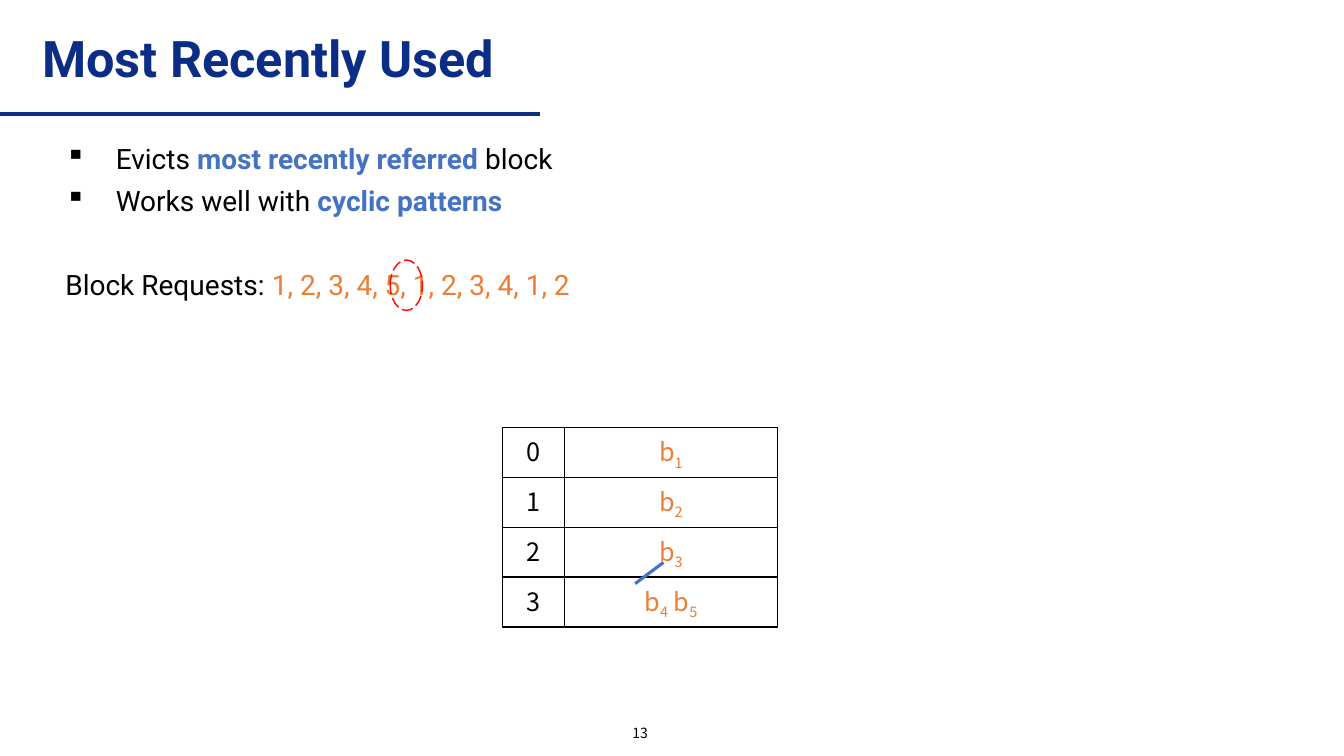
from dataclasses import dataclass
from typing import NamedTuple

from lxml import etree
from pptx import Presentation
from pptx.dml.color import RGBColor
from pptx.enum.dml import MSO_LINE
from pptx.enum.shapes import MSO_CONNECTOR, MSO_SHAPE
from pptx.enum.text import MSO_ANCHOR, PP_ALIGN
from pptx.oxml.ns import qn
from pptx.util import Inches, Pt

CENTER = PP_ALIGN.CENTER
MIDDLE, TOP = MSO_ANCHOR.MIDDLE, MSO_ANCHOR.TOP
STRAIGHT = MSO_CONNECTOR.STRAIGHT
ELLIPSE = MSO_SHAPE.OVAL
LONG_DASH = MSO_LINE.LONG_DASH
BLANK_LAYOUT = 6


@dataclass(frozen=True)
class Theme:
    heading_font: str = "Roboto"
    table_font: str = "Noto Sans CJK KR"
    navy: str = "0B2D86"
    blue: str = "4472C4"
    orange: str = "ED7D31"
    red: str = "FF0000"
    black: str = "000000"
    title_size: int = 36
    body_size: int = 20
    table_size: int = 18
    number_size: int = 10


THEME = Theme()


class Run(NamedTuple):
    text: str
    color: str = THEME.black
    bold: bool = False
    subscript: bool = False


class Line(NamedTuple):
    runs: list[Run]
    formats: dict = {}
    bullet: str = ""


class TextBox(NamedTuple):
    box: tuple[float, float, float, float]
    lines: list[Line]
    font: str
    size: int
    anchor: MSO_ANCHOR


class Segment(NamedTuple):
    start: tuple[float, float]
    end: tuple[float, float]
    color: str
    width: float


BULLET_GAP = {"space_before": Pt(6)}
TEXT_BOXES = [
    TextBox((0.32, 0.24, 9.17, 0.74),
            [Line([Run("Most Recently Used", THEME.navy, bold=True)],
                  {"line_spacing": 0.9})],
            THEME.heading_font, THEME.title_size, MIDDLE),
    TextBox((4.85, 7.11, 3, 0.32), [Line([Run("13")], {"alignment": CENTER})],
            THEME.table_font, THEME.number_size, MIDDLE),
    TextBox((0.55, 1.35, 12.14, 1.81), [
        Line([Run("Evicts "), Run("most recently referred", THEME.blue, bold=True),
              Run(" block")], bullet="▪"),
        Line([Run("Works well with "), Run("cyclic patterns", THEME.blue, bold=True)],
             BULLET_GAP, bullet="▪"),
        Line([Run("Block Requests: "),
              Run("1, 2, 3, 4, 5, 1, 2, 3, 4, 1, 2", THEME.orange)],
             {"space_before": Pt(36)}),
    ], THEME.heading_font, THEME.body_size, TOP),
]

TITLE_RULE = Segment((0, 1.13), (5.36, 1.13), THEME.navy, 3)
EVICTION_STROKE = Segment((6.3, 5.79), (6.58, 5.58), THEME.blue, 2.25)
REQUEST_MARK = (3.87, 2.58, 0.32, 0.5)

CACHE_SLOTS = [["1"], ["2"], ["3"], ["4", "5"]]
CACHE_POSITION = (4.98, 4.24)
CACHE_COLUMNS = (0.62, 2.11)
CACHE_ROW_HEIGHT = 0.495


def rgb(color: str) -> RGBColor:
    return RGBColor.from_string(color)


def apply_formats(target, formats: dict) -> None:
    for name, value in formats.items():
        setattr(target, name, value)


def add_bullet(paragraph, symbol: str) -> None:
    properties = paragraph._p.get_or_add_pPr()
    properties.set("marL", str(Inches(0.5)))
    properties.set("indent", str(-Inches(0.5)))
    etree.SubElement(properties, qn("a:buChar"), char=symbol)


def write_line(paragraph, line: Line, font: str, size: int) -> None:
    if line.bullet:
        add_bullet(paragraph, line.bullet)
    apply_formats(paragraph, line.formats)
    for part in line.runs:
        run = paragraph.add_run()
        run.text = part.text
        apply_formats(run.font, {"name": font, "size": Pt(size), "bold": part.bold})
        run.font.color.rgb = rgb(part.color)
        if part.subscript:
            run.font._element.set("baseline", "-25000")


def add_text(slide, item: TextBox) -> None:
    frame = slide.shapes.add_textbox(*map(Inches, item.box)).text_frame
    apply_formats(frame, {"word_wrap": True, "vertical_anchor": item.anchor})
    for index, line in enumerate(item.lines):
        paragraph = frame.add_paragraph() if index else frame.paragraphs[0]
        write_line(paragraph, line, item.font, item.size)


def add_segment(slide, segment: Segment) -> None:
    ends = map(Inches, segment.start + segment.end)
    connector = slide.shapes.add_connector(STRAIGHT, *ends)
    connector.line.color.rgb = rgb(segment.color)
    connector.line.width = Pt(segment.width)
    etree.SubElement(connector._element.spPr, qn("a:effectLst"))


def add_borders(cell) -> None:
    properties = cell._tc.get_or_add_tcPr()
    for index, side in enumerate(("lnL", "lnR", "lnT", "lnB")):
        border = etree.Element(qn(f"a:{side}"), w=str(Pt(1)))
        fill = etree.SubElement(border, qn("a:solidFill"))
        etree.SubElement(fill, qn("a:srgbClr"), val=THEME.black)
        properties.insert(index, border)


def block_runs(blocks: list[str]) -> list[Run]:
    """Name each block as a letter b with its number as a subscript."""
    runs = []
    for index, number in enumerate(blocks):
        runs.append(Run(" b" if index else "b", THEME.orange))
        runs.append(Run(number, THEME.orange, subscript=True))
    return runs


def add_cache_table(slide) -> None:
    row_count = len(CACHE_SLOTS)
    size = (sum(CACHE_COLUMNS), CACHE_ROW_HEIGHT * row_count)
    table = slide.shapes.add_table(row_count, len(CACHE_COLUMNS),
                                   *map(Inches, CACHE_POSITION + size)).table
    apply_formats(table, {"first_row": False, "horz_banding": False})
    for column, width in zip(table.columns, CACHE_COLUMNS):
        column.width = Inches(width)
    for index, blocks in enumerate(CACHE_SLOTS):
        table.rows[index].height = Inches(CACHE_ROW_HEIGHT)
        for cell, runs in zip(table.rows[index].cells,
                              ([Run(str(index))], block_runs(blocks))):
            cell.fill.background()
            add_borders(cell)
            write_line(cell.text_frame.paragraphs[0],
                       Line(runs, {"alignment": CENTER}),
                       THEME.table_font, THEME.table_size)


def add_request_mark(slide) -> None:
    mark = slide.shapes.add_shape(ELLIPSE, *map(Inches, REQUEST_MARK))
    mark.shadow.inherit = False
    mark.fill.background()
    mark.line.color.rgb = rgb(THEME.red)
    apply_formats(mark.line, {"width": Pt(1), "dash_style": LONG_DASH})


def main() -> None:
    presentation = Presentation()
    apply_formats(presentation, {"slide_width": Inches(13.33),
                                 "slide_height": Inches(7.5)})
    slide = presentation.slides.add_slide(presentation.slide_layouts[BLANK_LAYOUT])
    add_segment(slide, TITLE_RULE)
    for item in TEXT_BOXES:
        add_text(slide, item)
    add_cache_table(slide)
    add_segment(slide, EVICTION_STROKE)
    add_request_mark(slide)
    presentation.save("out.pptx")


if __name__ == "__main__":
    main()
